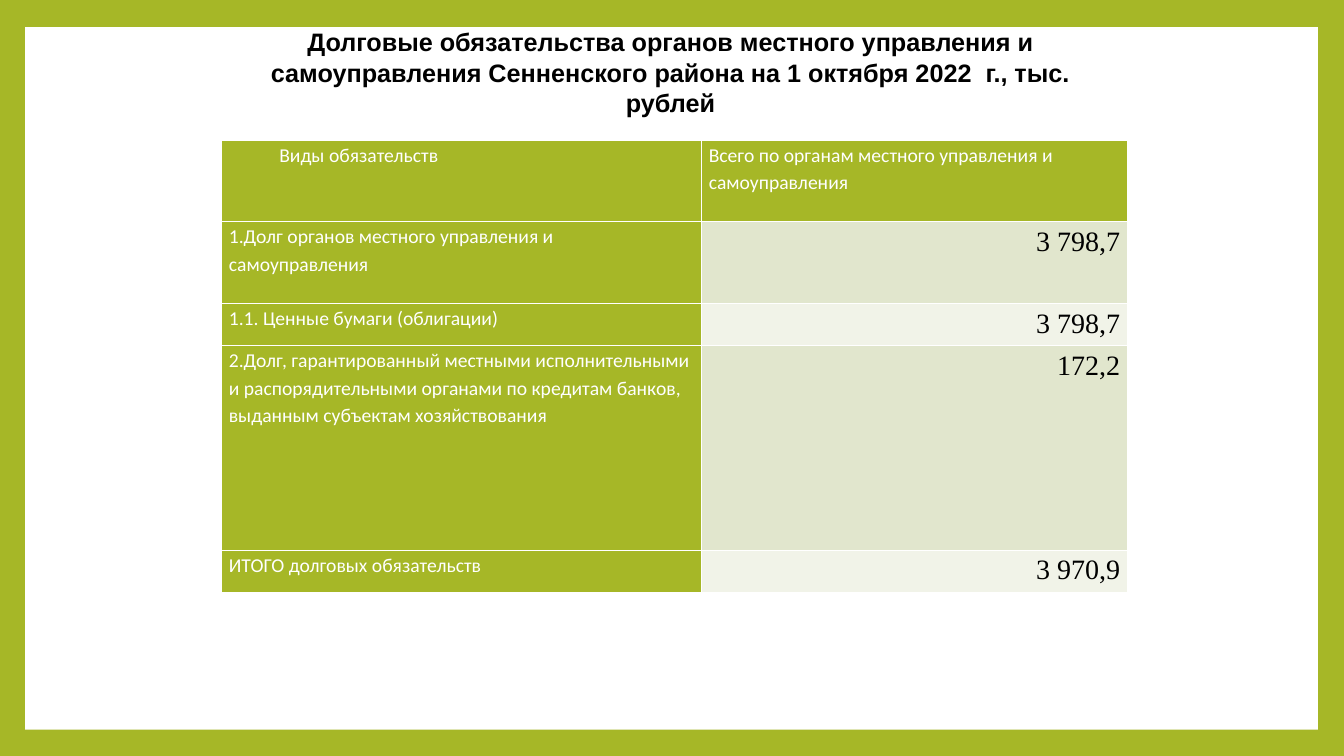
from lxml import etree
from pptx import Presentation
from pptx.dml.color import RGBColor
from pptx.enum.shapes import MSO_SHAPE
from pptx.enum.text import MSO_ANCHOR, MSO_AUTO_SIZE, PP_ALIGN
from pptx.oxml.ns import qn
from pptx.util import Inches, Pt

GREEN = RGBColor(0xA6, 0xB7, 0x27)
BAND_DARK = RGBColor(0xE1, 0xE6, 0xCD)
BAND_LIGHT = RGBColor(0xF1, 0xF3, 0xE8)
WHITE = RGBColor(0xFF, 0xFF, 0xFF)
BLACK = RGBColor(0, 0, 0)

RECTANGLE = MSO_SHAPE.RECTANGLE
MIDDLE = MSO_ANCHOR.MIDDLE
FIT_SHAPE = MSO_AUTO_SIZE.SHAPE_TO_FIT_TEXT
LEFT, CENTER, RIGHT = PP_ALIGN.LEFT, PP_ALIGN.CENTER, PP_ALIGN.RIGHT

TITLE = ("Долговые обязательства органов местного управления и самоуправления "
         "Сенненского района на 1 октября 2022  г., тыс. рублей")
DEBT_ROWS = [
    ("Виды обязательств", "Всего по органам местного управления и самоуправления"),
    ("1.Долг органов местного управления и самоуправления", "3 798,7"),
    ("1.1. Ценные бумаги (облигации)", "3 798,7"),
    ("2.Долг, гарантированный местными исполнительными и распорядительными "
     "органами по кредитам банков, выданным субъектам хозяйствования", "172,2"),
    ("ИТОГО долговых обязательств", "3 970,9"),
]
COLUMN_WIDTHS = [4.76, 4.22]
ROW_HEIGHTS = [0.81, 0.81, 0.42, 2.03, 0.42]


def write_text(text_frame, text, *, font, size, color, bold=False,
               align=LEFT, line_spacing=1.0, first_indent=0):
    text_frame.word_wrap = True
    paragraph = text_frame.paragraphs[0]
    paragraph.alignment = align
    paragraph.line_spacing = line_spacing
    paragraph.space_before = Pt(0)
    if first_indent:
        properties = paragraph._p.get_or_add_pPr()
        properties.set("marL", "0")
        properties.set("indent", str(Inches(first_indent)))
    run = paragraph.add_run()
    run.text = text
    run.font.name = font
    run.font.size = Pt(size)
    run.font.bold = bold
    run.font.color.rgb = color


def add_frame(slide, left, top, width, height):
    """Green background with a white panel on it."""
    background = slide.background.fill
    background.solid()
    background.fore_color.rgb = GREEN
    panel = slide.shapes.add_shape(
        RECTANGLE, Inches(left), Inches(top), Inches(width), Inches(height))
    panel.shadow.inherit = False
    panel.fill.solid()
    panel.fill.fore_color.rgb = WHITE
    panel.line.fill.background()


def place_title(slide, left, top, width, height):
    title = slide.shapes.title
    title.left, title.top = Inches(left), Inches(top)
    title.width, title.height = Inches(width), Inches(height)
    text_frame = title.text_frame
    text_frame.vertical_anchor = MIDDLE
    text_frame.auto_size = FIT_SHAPE
    write_text(text_frame, TITLE, font="Arial", size=18, color=BLACK,
               bold=True, align=CENTER)


def format_cell(cell, fill_color):
    cell.margin_left = cell.margin_right = Inches(0.07)
    cell.margin_top = cell.margin_bottom = 0
    properties = cell._tc.get_or_add_tcPr()
    for side in ("a:lnL", "a:lnR", "a:lnT", "a:lnB"):
        border = etree.SubElement(properties, qn(side), w=str(Pt(1)))
        border_fill = etree.SubElement(border, qn("a:solidFill"))
        etree.SubElement(border_fill, qn("a:srgbClr"), val=str(WHITE))
    cell.fill.solid()
    cell.fill.fore_color.rgb = fill_color


def add_debt_table(slide, left, top):
    table = slide.shapes.add_table(
        len(ROW_HEIGHTS), len(COLUMN_WIDTHS), Inches(left), Inches(top),
        Inches(sum(COLUMN_WIDTHS)), Inches(sum(ROW_HEIGHTS))).table
    for column, width in zip(table.columns, COLUMN_WIDTHS):
        column.width = Inches(width)
    for row, height in zip(table.rows, ROW_HEIGHTS):
        row.height = Inches(height)

    for row_index, texts in enumerate(DEBT_ROWS):
        for column_index, text in enumerate(texts):
            cell = table.cell(row_index, column_index)
            if row_index == 0 or column_index == 0:
                format_cell(cell, GREEN)
                indent = 0.5 if row_index == column_index else 0
                write_text(cell.text_frame, text, font="Calibri", size=14,
                           color=WHITE, line_spacing=1.15, first_indent=indent)
                cell.text_frame.paragraphs[0].runs[0].font.bold = False
            else:
                format_cell(cell, BAND_DARK if row_index % 2 else BAND_LIGHT)
                write_text(cell.text_frame, text, font="Times New Roman", size=20,
                           color=BLACK, align=RIGHT, line_spacing=1.15)


def main():
    presentation = Presentation()
    presentation.slide_width = Inches(13.33)
    presentation.slide_height = Inches(7.5)
    title_only = presentation.slide_layouts[5]
    slide = presentation.slides.add_slide(title_only)
    add_frame(slide, 0.25, 0.27, 12.82, 6.97)
    # The panel goes behind the title placeholder.
    slide.shapes._spTree.append(slide.shapes.title._element)
    place_title(slide, 2.12, 0.21, 9.06, 1.01)
    add_debt_table(slide, 2.2, 1.39)
    presentation.save("out.pptx")


if __name__ == "__main__":
    main()
